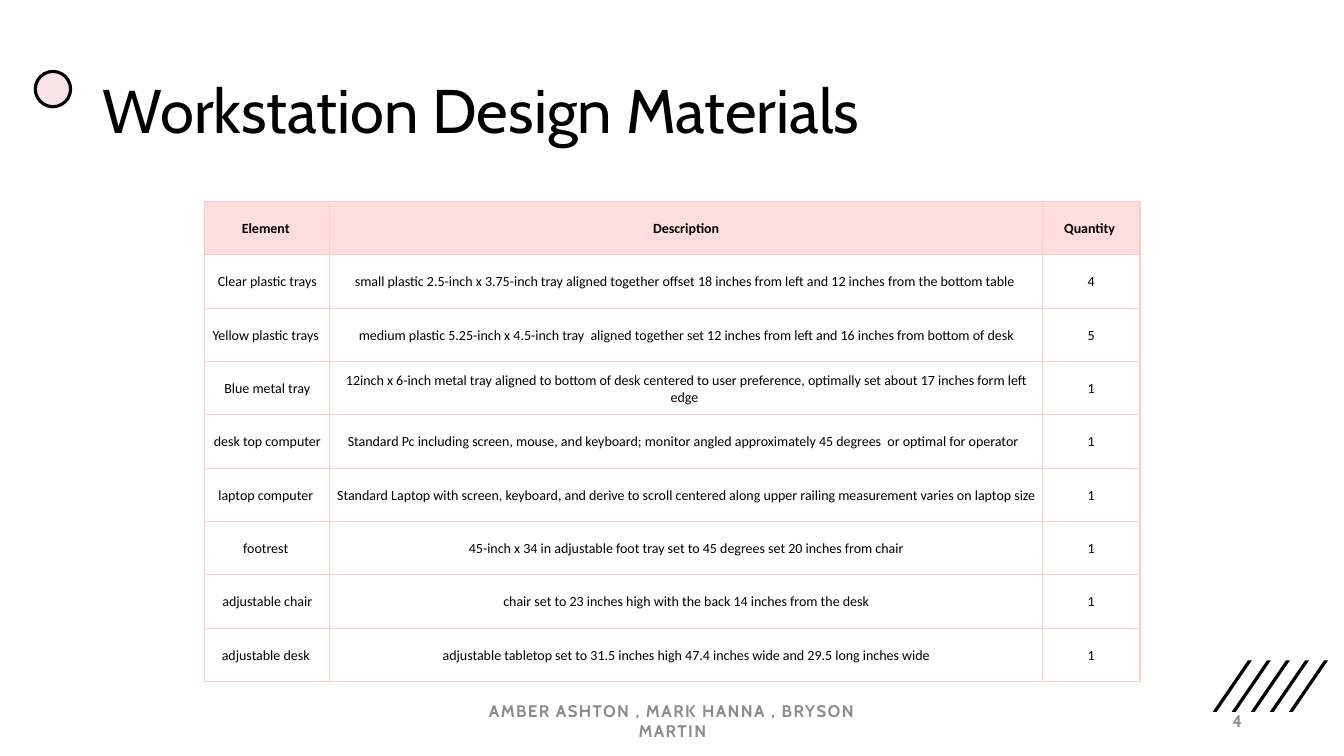
from lxml.etree import SubElement
from pptx import Presentation
from pptx.dml.color import RGBColor
from pptx.enum.shapes import MSO_SHAPE
from pptx.enum.text import MSO_ANCHOR, PP_ALIGN
from pptx.oxml.ns import qn
from pptx.util import Cm, Pt

COLORS = {
    "ink": "000000",
    "footer": "8C8C8C",
    "dot": "FCE2E9",
    "header": "FFDDDD",
    "border": "FFCCCC",
}

MATERIALS = [
    ("Element ", "Description", "Quantity "),
    ("Clear plastic trays",
     "small plastic 2.5-inch x 3.75-inch tray aligned together offset 18 inches "
     "from left and 12 inches from the bottom table ", "4"),
    ("Yellow plastic trays ",
     "medium plastic 5.25-inch x 4.5-inch tray  aligned together set 12 inches "
     "from left and 16 inches from bottom of desk", "5"),
    ("Blue metal tray",
     "12inch x 6-inch metal tray aligned to bottom of desk centered to user "
     "preference, optimally set about 17 inches form left edge ", "1"),
    ("desk top computer",
     "Standard Pc including screen, mouse, and keyboard; monitor angled "
     "approximately 45 degrees  or optimal for operator  ", "1"),
    ("laptop computer ",
     "Standard Laptop with screen, keyboard, and derive to scroll centered along "
     "upper railing measurement varies on laptop size", "1"),
    ("footrest ",
     "45-inch x 34 in adjustable foot tray set to 45 degrees set 20 inches from chair",
     "1"),
    ("adjustable chair",
     "chair set to 23 inches high with the back 14 inches from the desk", "1"),
    ("adjustable desk ",
     "adjustable tabletop set to 31.5 inches high 47.4 inches wide and 29.5 long "
     "inches wide", "1"),
]


def color(name):
    return RGBColor.from_string(COLORS[name])


def write(text_frame, text, size=12, font="Cabin", ink="ink", bold=False,
          align=PP_ALIGN.LEFT, line_spacing=None, tracking=None):
    paragraph = text_frame.paragraphs[0]
    paragraph.alignment = align
    paragraph.line_spacing = line_spacing
    run = paragraph.add_run()
    run.text = text
    run.font.size = Pt(size)
    run.font.name = font
    run.font.bold = bold
    run.font.color.rgb = color(ink)
    if tracking:
        run._r.get_or_add_rPr().set("spc", str(tracking * 100))


class SlideBuilder:
    def __init__(self, slide):
        self.slide = slide
        self.footer_style = {"ink": "footer", "bold": True, "tracking": 1}
        self.cell_style = {"size": 10, "font": "Calibri", "align": PP_ALIGN.CENTER}

    def text(self, text, left, top, width, height, **style):
        box = self.slide.shapes.add_textbox(Cm(left), Cm(top), Cm(width), Cm(height))
        box.text_frame.word_wrap = True
        box.text_frame.vertical_anchor = MSO_ANCHOR.MIDDLE
        write(box.text_frame, text, **style)

    def footer(self, text, left, width, align):
        self.text(text, left, 17.65, width, 1.02, align=align, **self.footer_style)

    def dot(self, left, top, size):
        shape = self.slide.shapes.add_shape(
            MSO_SHAPE.OVAL, Cm(left), Cm(top), Cm(size), Cm(size))
        shape.shadow.inherit = False
        shape.fill.solid()
        shape.fill.fore_color.rgb = color("dot")
        shape.line.color.rgb = color("ink")
        shape.line.width = Pt(2.25)

    def stripe(self, left, top, height, slant, thickness):
        bottom = Cm(top + height)
        builder = self.slide.shapes.build_freeform(Cm(left + thickness), bottom)
        builder.add_line_segments([
            (Cm(left), bottom),
            (Cm(left + slant), Cm(top)),
            (Cm(left + slant + thickness), Cm(top)),
        ], close=True)
        shape = builder.convert_to_shape()
        shape.shadow.inherit = False
        shape.fill.solid()
        shape.fill.fore_color.rgb = color("ink")
        shape.line.fill.background()

    def borders(self, cell, **widths):
        properties = cell._tc.get_or_add_tcPr()
        for side, width in widths.items():
            line = SubElement(properties, qn(f"a:ln{side}"), w=str(Pt(width)))
            fill = SubElement(line, qn("a:solidFill"))
            SubElement(fill, qn("a:srgbClr"), val=COLORS["border"])

    def table(self, rows, left, top, widths, height):
        frame = self.slide.shapes.add_table(
            len(rows), len(widths), Cm(left), Cm(top), Cm(sum(widths)), Cm(height))
        table = frame.table
        table.first_row = table.horz_banding = False
        for column, width in zip(table.columns, widths):
            column.width = Cm(width)
        last_row, last_column = len(rows) - 1, len(widths) - 1
        for r, row in enumerate(rows):
            for c, text in enumerate(row):
                cell = table.cell(r, c)
                cell.vertical_anchor = MSO_ANCHOR.MIDDLE
                cell.margin_left = cell.margin_right = cell.margin_top = Cm(0.03)
                cell.margin_bottom = 0
                write(cell.text_frame, text, bold=r == 0, **self.cell_style)
                self.borders(
                    cell,
                    L=1 if c == 0 else 0.5,
                    R=1 if c == last_column else 0.5,
                    T=1 if r <= 1 else 0.5,
                    B=1 if r in (0, last_row) else 0.5)
                if r == 0:
                    cell.fill.solid()
                    cell.fill.fore_color.rgb = color("header")
                else:
                    cell.fill.background()


def main():
    presentation = Presentation()
    presentation.slide_width = Cm(33.87)
    presentation.slide_height = Cm(19.05)
    builder = SlideBuilder(presentation.slides.add_slide(presentation.slide_layouts[6]))

    for index in range(5):
        builder.stripe(30.56 + index * 0.48, 16.64, height=1.3, slant=0.89, thickness=0.1)
    builder.dot(0.89, 1.8, 0.89)
    builder.text("Workstation Design Materials ", 2.34, 1.02, 29.21, 3.68,
                 size=44, line_spacing=0.9)
    builder.footer("AMBER ASHTON , MARK HANNA , BRYSON MARTIN", 11.23, 11.43,
                   PP_ALIGN.CENTER)
    builder.footer("4", 23.93, 7.62, PP_ALIGN.RIGHT)
    builder.table(MATERIALS, 5.16, 5.08, widths=(3.15, 17.96, 2.46), height=12.09)

    presentation.save("out.pptx")


if __name__ == "__main__":
    main()
